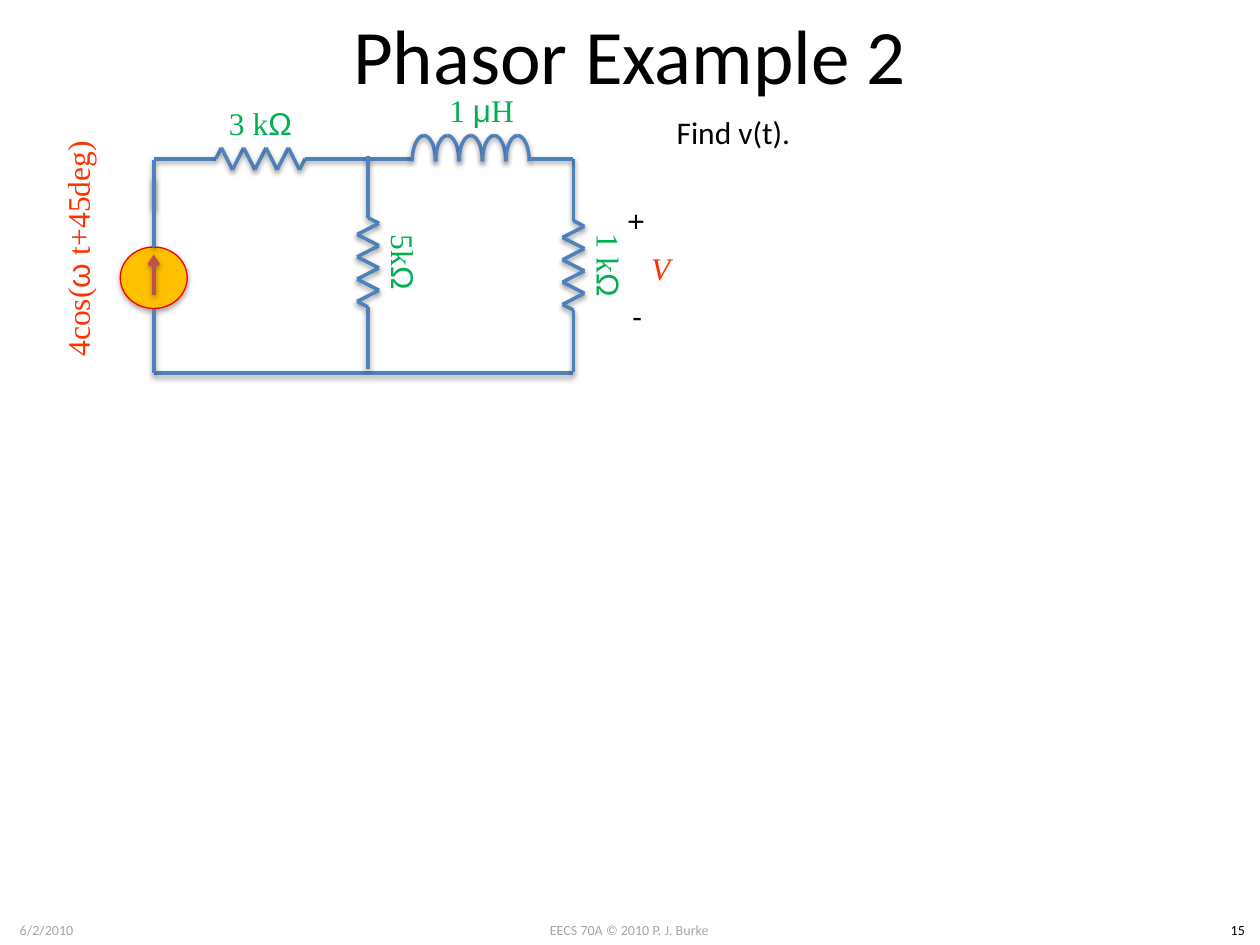
from lxml.etree import SubElement
from pptx import Presentation
from pptx.dml.color import RGBColor
from pptx.enum.shapes import MSO_CONNECTOR as Connector, MSO_SHAPE as Preset
from pptx.enum.text import MSO_ANCHOR as Anchor, MSO_AUTO_SIZE as AutoSize, PP_ALIGN as Align
from pptx.oxml.ns import qn
from pptx.util import Cm, Pt

COLORS = {
    "text": "000000", "footer": "A6A6A6", "wire": "4F81BD", "value": "00B050",
    "signal": "FF3300", "source": "FFC000", "rim": "FF0000", "arrow": "C0504D",
}
SERIF, SANS, BODY = "Times New Roman", "Arial", "Calibri"


def rgb(name):
    """Return the palette colour of that name."""
    return RGBColor.from_string(COLORS[name])


def outline(shape, color="wire", width=2, opacity=38):
    """Give a shape its line and a soft shadow below it."""
    shape.line.color.rgb = rgb(color)
    shape.line.width = Pt(width)
    effects = SubElement(shape._element.spPr, qn("a:effectLst"))
    shadow = SubElement(effects, qn("a:outerShdw"), blurRad="40000", dist="20000",
                        dir="5400000", rotWithShape="0")
    black = SubElement(shadow, qn("a:srgbClr"), val="000000")
    SubElement(black, qn("a:alpha"), val=str(opacity * 1000))


def add_wire(shapes, start, end, color="wire"):
    """Draw a straight line between two points."""
    wire = shapes.add_connector(Connector.STRAIGHT, *map(Cm, start + end))
    outline(wire, color)
    return wire


def add_text(shapes, box, runs, color="text", size=18, align=Align.CENTER,
             rotation=0, wrap=True, grow=False, italic=False):
    """Place one paragraph of (text, font) runs in a box."""
    shape = shapes.add_textbox(*map(Cm, box))
    shape.rotation = rotation
    frame = shape.text_frame
    frame.word_wrap = wrap
    frame.auto_size = AutoSize.SHAPE_TO_FIT_TEXT if grow else AutoSize.NONE
    frame.vertical_anchor = Anchor.TOP if grow else Anchor.MIDDLE
    paragraph = frame.paragraphs[0]
    paragraph.alignment = align
    for text, font in runs:
        run = paragraph.add_run()
        run.text = text
        run.font.name = font
        run.font.size = Pt(size)
        run.font.italic = italic
        run.font.color.rgb = rgb(color)


def add_resistor(slide, left, top, length, value, vertical=False):
    """Draw a resistor with leads and its value beside it."""
    shapes = slide.shapes.add_group_shape().shapes
    lead, height, label_gap, peaks = 1.25, 0.22, 0.72, 8
    pitch = (length - 2 * lead) / peaks

    def place(along, across):
        """Turn a position on the resistor into a point on the slide."""
        return (left - across, top + along) if vertical else (left + along, top + across)

    zigzag = [(lead + (i + 0.5) * pitch, height if i % 2 else -height) for i in range(peaks)]
    points = [(0, 0), (lead, 0), *zigzag, (length - lead, 0), (length, 0)]
    for start, end in zip(points, points[1:]):
        add_wire(shapes, place(*start), place(*end))
    x, y = place(length / 2, -label_gap)
    width, depth = 3.02, 1.85
    add_text(shapes, (x - width / 2, y - depth / 2, width, depth),
             [(value, SERIF), ("Ω", SANS)], "value", rotation=90 if vertical else 0)


def add_inductor(slide, left, top, length):
    """Draw a coil of five humps, each made of two quarter arcs."""
    shapes = slide.shapes.add_group_shape().shapes
    lead, humps, height = 0.89, 5, 1.04
    pitch = (length - 2 * lead) / humps
    add_wire(shapes, (left + lead, top), (left, top))
    for i in range(humps):
        center = left + lead + (i + 0.5) * pitch
        for angles in ((162, 0), (0, 54)):
            arc = shapes.add_shape(Preset.ARC, Cm(center - height / 2),
                                   Cm(top + 0.05 - pitch / 2), Cm(height), Cm(pitch))
            arc.rotation = 270
            arc.adjustments[0], arc.adjustments[1] = angles
            arc.fill.background()
            outline(arc)
    add_wire(shapes, (left + length, top), (left + length - lead, top))


def add_source(slide, x, top, bottom):
    """Draw the current source on its vertical wire."""
    shapes = slide.shapes.add_group_shape().shapes
    width, height = 1.35, 1.24
    circle_top = top + 1.78
    add_wire(shapes, (x, top + 1.02), (x, top + 0.03))
    circle = shapes.add_shape(Preset.OVAL, Cm(x - width / 2), Cm(circle_top),
                              Cm(width), Cm(height))
    circle.fill.solid()
    circle.fill.fore_color.rgb = rgb("source")
    outline(circle, "rim", 0.75, 35)
    arrow = add_wire(shapes, (x, circle_top + 0.96), (x, circle_top + 0.15), "arrow")
    SubElement(arrow.line._get_or_add_ln(), qn("a:tailEnd"), type="arrow")
    add_wire(shapes, (x, circle_top), (x, top + 0.38))
    add_wire(shapes, (x, circle_top + height), (x, bottom))
    add_text(slide.shapes, (x - 4.22, top + 1.04, 5.36, 1.55),
             [("4cos(", SERIF), ("ω ", SANS), ("t+45deg)", SERIF)], "signal", rotation=270)


def add_output(slide, left, top):
    """Mark the output voltage with its polarity."""
    shapes = slide.shapes.add_group_shape().shapes
    add_text(shapes, (left + 0.11, top, 0.84, 1.02), [("+", BODY)],
             align=Align.LEFT, rotation=90, wrap=False, grow=True)
    add_text(shapes, (left + 0.16, top + 1.88, 0.71, 1.02), [("-", BODY)],
             align=Align.LEFT, wrap=False, grow=True)
    add_text(shapes, (left, top + 0.63, 1.96, 1.55), [("V", SERIF)], "signal", italic=True)


def add_circuit(slide, left, top, width, height):
    """Draw the whole circuit in its box."""
    right, bottom, middle = left + width, top + height, left + 4.32
    add_resistor(slide, left, top, 4.3, "3 k")
    add_wire(slide.shapes, (left, bottom), (right, bottom))
    add_output(slide, right + 0.78, top + 0.79)
    add_resistor(slide, right, top, 4.3, "1 k", vertical=True)
    add_source(slide, left, top, bottom)
    add_inductor(slide, middle, top, right - middle)
    add_text(slide.shapes, (middle + 0.78, top - 1.9, 3.02, 1.85),
             [("1 ", SERIF), ("μ", SANS), ("H", SERIF)], "value")
    add_resistor(slide, middle, top - 0.06, 4.3, "5k", vertical=True)


def add_footer(slide, top):
    """Place the date, the course and the slide number."""
    for left, width, text, color in (
        (9.73, 5.92, "EECS 70A © 2010 P. J. Burke", "footer"),
        (0, 1.88, "6/2/2010", "footer"),
        (24.51, 0.89, "15", "text"),
    ):
        add_text(slide.shapes, (left, top, width, 0.61), [(text, BODY)], color, 8, grow=True)


def main():
    """Build the slide and save it."""
    presentation = Presentation()
    presentation.slide_width, presentation.slide_height = Cm(25.4), Cm(19.05)
    slide = presentation.slides.add_slide(presentation.slide_layouts[6])
    add_footer(slide, 18.45)
    add_text(slide.shapes, (1.27, 0, 22.86, 2.16), [("Phasor Example 2", BODY)], size=44)
    add_text(slide.shapes, (13.39, 2.16, 4.29, 1.02), [("Find v(t).", BODY)],
             align=Align.LEFT, grow=True)
    add_circuit(slide, 3.1, 3.2, 8.46, 4.32)
    presentation.save("out.pptx")


if __name__ == "__main__":
    main()
